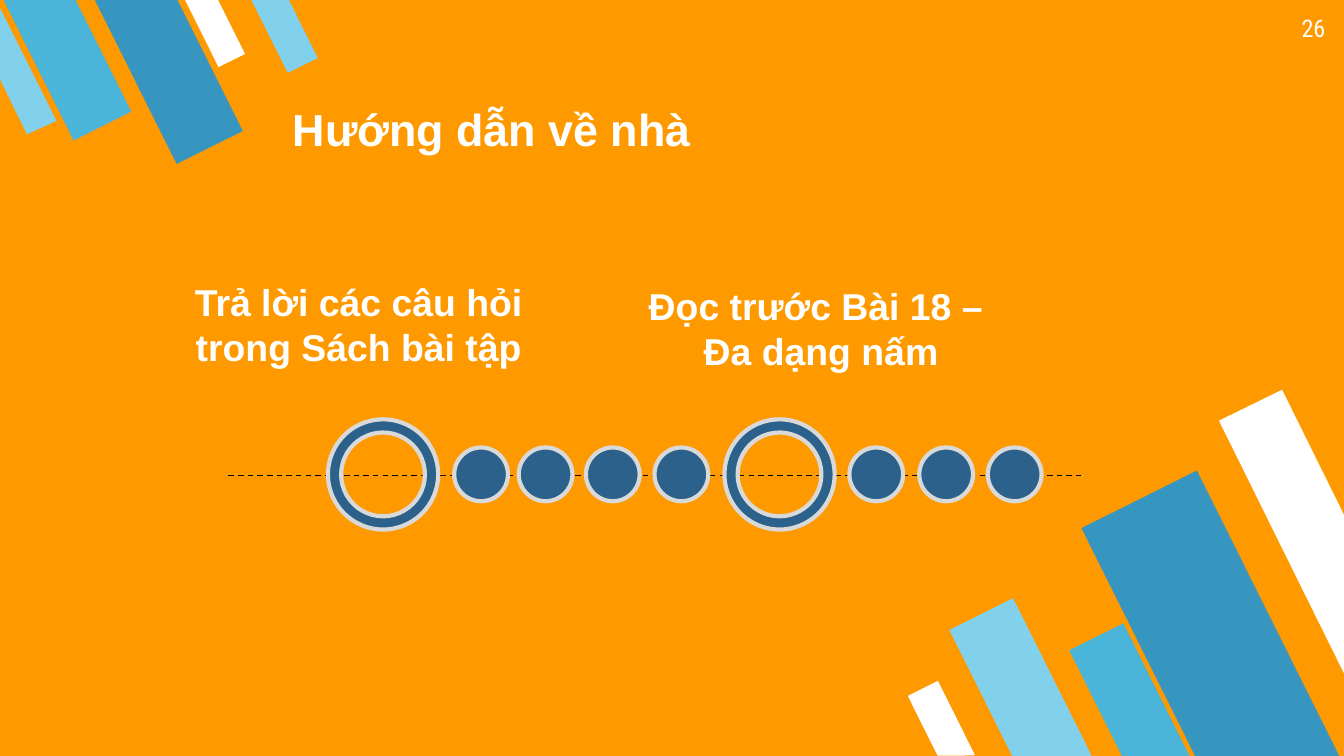
from dataclasses import dataclass

from lxml import etree
from pptx import Presentation
from pptx.dml.color import RGBColor
from pptx.enum.dml import MSO_LINE
from pptx.enum.shapes import MSO_CONNECTOR, MSO_SHAPE
from pptx.enum.text import MSO_ANCHOR, PP_ALIGN
from pptx.oxml.ns import qn
from pptx.util import Inches, Pt

BAR = MSO_SHAPE.FLOWCHART_MANUAL_INPUT
RING, DOT = MSO_SHAPE.DONUT, MSO_SHAPE.OVAL
LINE, DASH = MSO_CONNECTOR.STRAIGHT, MSO_LINE.DASH
TOP, BOTTOM = MSO_ANCHOR.TOP, MSO_ANCHOR.BOTTOM
LEFT, MID, RIGHT = PP_ALIGN.LEFT, PP_ALIGN.CENTER, PP_ALIGN.RIGHT


@dataclass(frozen=True)
class Theme:
    """Hold the colours, fonts and type sizes."""
    back: str = "FF9900"
    white: str = "FFFFFF"
    pale: str = "81D1EC"
    sky: str = "4BB5D9"
    blue: str = "3796BF"
    deep: str = "2B618B"
    rim: str = "D9D9D9"
    ink: str = "000000"
    font: str = "Arial"
    thin: str = "Roboto Condensed"
    title: int = 24
    body: int = 20
    small: int = 13


T = Theme()
WIDTH = Inches(10)
HEIGHT = WIDTH * 9 // 16
CELL = WIDTH / 100
AXIS = 35.3
LOW_BARS = [
    (73.3, 45, 5.3, 13.2, T.pale),
    (85.3, 35.9, 9.6, 23.9, T.blue),
    (81.8, 46.8, 4.5, 11.1, T.sky),
    (68.8, 50.9, 2.5, 6.2, T.white),
]
HIGH_BARS = [
    (14.9, -0.8, 2.2, 5.6, T.white),
    (2.6, -1.8, 4.8, 11.8, T.sky),
    (9.8, -2, 5.5, 13.7, T.blue),
    (19.9, -1, 2.5, 6.2, T.pale),
]
LOW_EDGE = [(95.4, 29), (90.7, 31.3), (100, 50.1), (100, 38.3)]
HIGH_EDGE = [(2, 10), (4.2, 9), (0, 0.6), (0, 5.9)]
RINGS = [28.5, 58]
DOTS = [35.8, 40.6, 45.6, 50.7, 65.2, 70.4, 75.5]


def grid(*cells):
    """Turn grid cells into slide lengths."""
    return [round(n * CELL) for n in cells]


def paint(shape, fill, line=None):
    """Give a shape its fill and outline, without shadow."""
    shape.shadow.inherit = False
    shape.fill.solid()
    shape.fill.fore_color.rgb = RGBColor.from_string(fill)
    if line:
        shape.line.color.rgb = RGBColor.from_string(line)
        shape.line.width = Pt(2.25)
    else:
        shape.line.fill.background()


def add_bars(slide, bars, turn):
    """Add a set of mirrored, tilted bars."""
    for *box, fill in bars:
        bar = slide.shapes.add_shape(BAR, *grid(*box))
        bar.rotation = turn
        bar._element.spPr.xfrm.set("flipH", "1")
        paint(bar, fill)


def add_edge(slide, points, fill):
    """Add a bar that is cut off by the slide edge."""
    start, *rest = [grid(*point) for point in points]
    pen = slide.shapes.build_freeform(*start)
    pen.add_line_segments(rest, close=True)
    paint(pen.convert_to_shape(), fill)


def add_bead(slide, kind, mid, size):
    """Add a round bead centred on the axis."""
    half = size / 2
    bead = slide.shapes.add_shape(kind, *grid(mid - half, AXIS - half, size, size))
    paint(bead, T.deep, T.rim)
    return bead


def add_axis(slide):
    """Add the dashed line behind the beads."""
    axis = slide.shapes.add_connector(LINE, *grid(17, 35.4, 80.5, 35.4))
    axis.line.color.rgb = RGBColor.from_string(T.ink)
    axis.line.width = Pt(0.75)
    axis.line.dash_style = DASH
    etree.SubElement(axis._element.spPr, qn("a:effectLst"))


def add_text(slide, box, text, size, align=MID, font=T.font, bold=True, anchor=TOP):
    """Add a white text box with one paragraph per line."""
    frame = slide.shapes.add_textbox(*grid(*box)).text_frame
    frame.word_wrap = True
    frame.vertical_anchor = anchor
    frame.margin_left = frame.margin_right = Inches(0.1)
    frame.margin_top = frame.margin_bottom = Inches(0.1)
    frame.text = text
    for para in frame.paragraphs:
        para.alignment = align
        for run in para.runs:
            run.font.name, run.font.size, run.font.bold = font, Pt(size), bold
            run.font.color.rgb = RGBColor.from_string(T.white)


def main():
    """Build the slide and save it."""
    deck = Presentation()
    deck.slide_width, deck.slide_height = WIDTH, HEIGHT
    slide = deck.slides.add_slide(deck.slide_layouts[6])
    slide.background.fill.solid()
    slide.background.fill.fore_color.rgb = RGBColor.from_string(T.back)

    add_bars(slide, LOW_BARS, 153.5)
    add_edge(slide, LOW_EDGE, T.white)
    add_bars(slide, HIGH_BARS, 333.5)
    add_edge(slide, HIGH_EDGE, T.pale)

    add_text(slide, (20.8, 6.5, 55.5, 6.1), "Hướng dẫn về nhà", T.title, LEFT, anchor=BOTTOM)
    add_text(slide, (93.6, 0, 6, 4.3), "26", T.small, RIGHT, T.thin, False)

    add_axis(slide)
    for mid in RINGS:
        add_bead(slide, RING, mid, 8.2).adjustments[0] = 0.12
    for mid in DOTS:
        add_bead(slide, DOT, mid, 4)

    add_text(slide, (11.7, 19.8, 30, 11), "Trả lời các câu hỏi\ntrong Sách bài tập", T.body)
    add_text(slide, (40.6, 20.1, 41, 7.9), "Đọc trước Bài 18 – \nĐa dạng nấm", T.body)
    deck.save("out.pptx")


if __name__ == "__main__":
    main()
